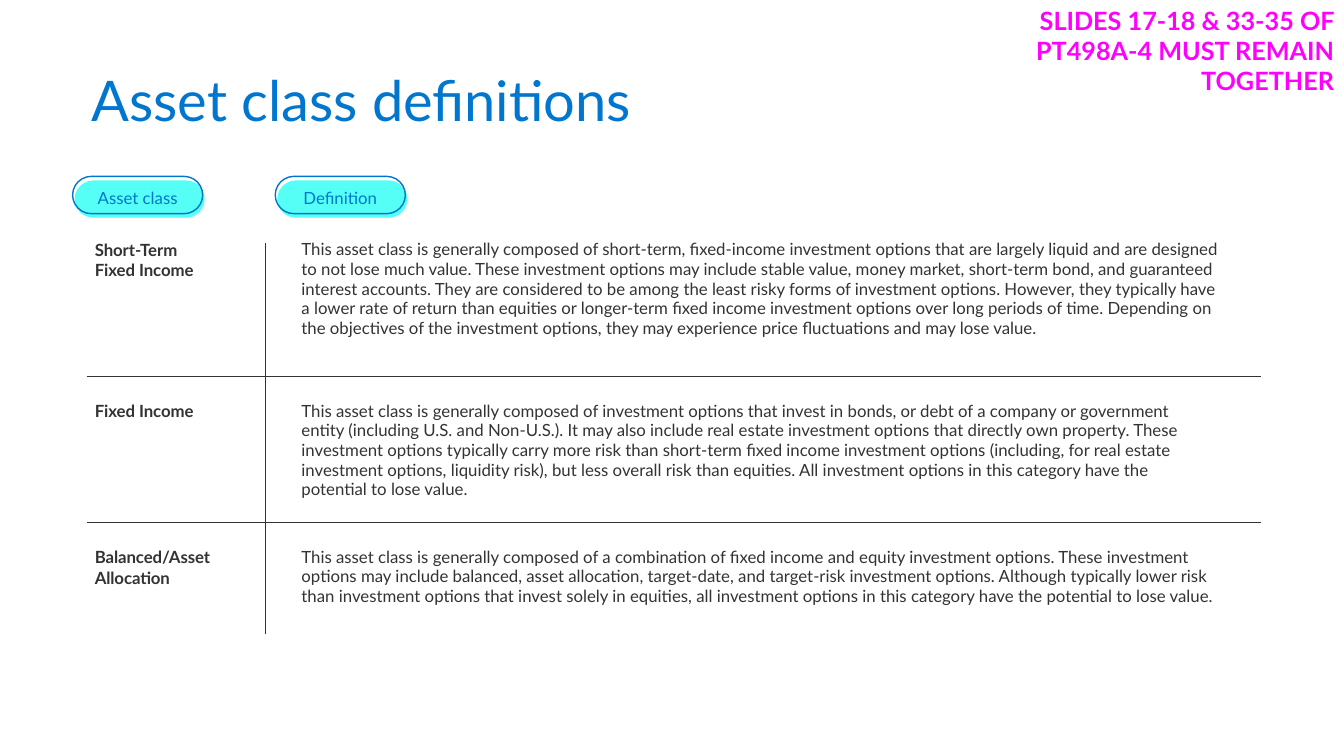
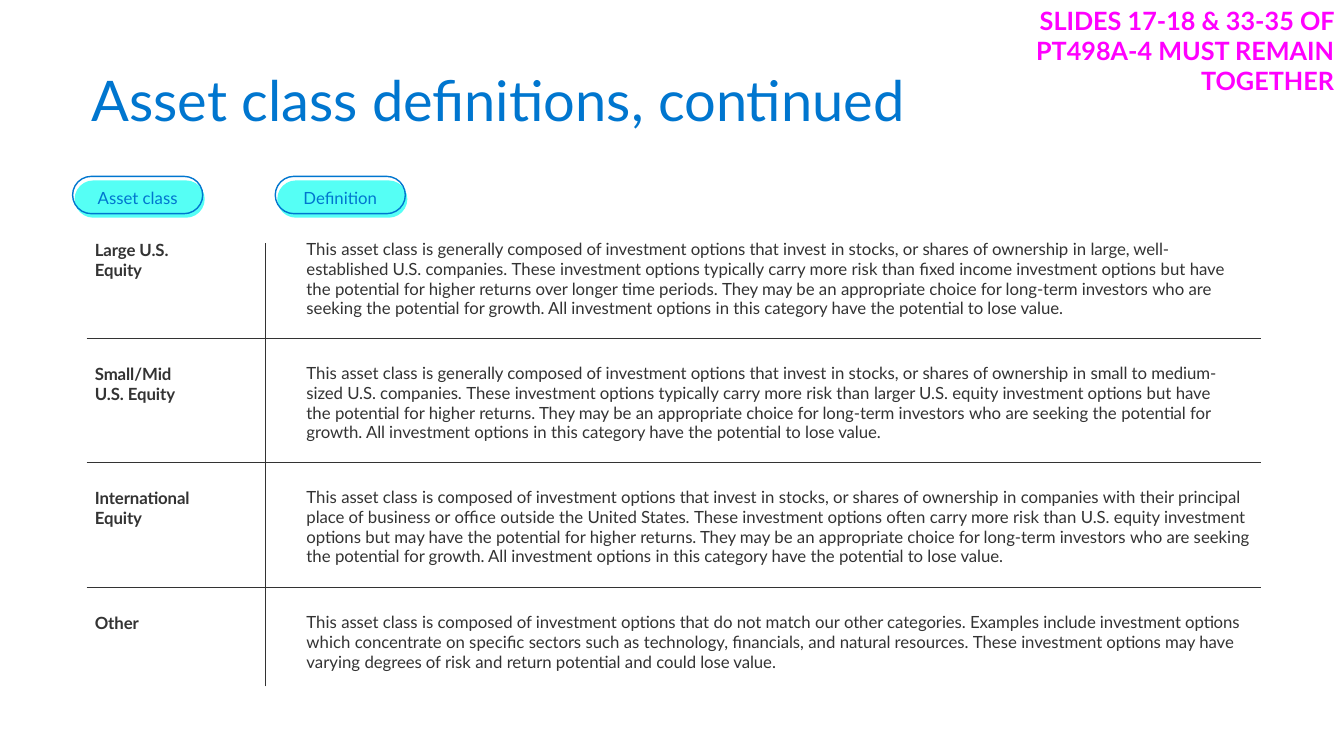
from itertools import accumulate

from lxml.etree import SubElement
from pptx import Presentation
from pptx.dml.color import RGBColor
from pptx.enum.shapes import MSO_CONNECTOR, MSO_SHAPE
from pptx.enum.text import PP_ALIGN
from pptx.oxml.ns import qn
from pptx.util import Emu, Pt

PX = 9144
FONT = "Lato"
COLORS = {
    "blue": "0076CF",
    "aqua": "55FFF5",
    "ink": "333333",
    "magenta": "FF00FF",
    "white": "FFFFFF",
}
TABLE_LEFT, TABLE_TOP = 84, 231
DIVIDER_RISE = 18
RULE_LEFT, RULE_RIGHT = 86, 1251
COLUMN_RULE_LEFT, COLUMN_RULE_TOP = 263, 241
NOTICE = "SLIDES 17-18 & 33-35 OF PT498A-4 MUST REMAIN TOGETHER"

DEFINITION_SLIDES = [
    {
        "title": "Asset class definitions",
        "columns": [209, 934],
        "row_heights": [160, 145, 145],
        "rule_bottom": 629,
        "rows": [
            (
                "Short-Term\vFixed Income",
                "This asset class is generally composed of short-term, fixed-income investment options that are "
                "largely liquid and are designed to not lose much value. These investment options may include "
                "stable value, money market, short-term bond, and guaranteed interest accounts. They are considered "
                "to be among the least risky forms of investment options. However, they typically have a lower rate "
                "of return than equities or longer-term fixed income investment options over long periods of time. "
                "Depending on the objectives of the investment options, they may experience price fluctuations and "
                "may lose value.",
                15,
            ),
            (
                "Fixed Income",
                "This asset class is generally composed of investment options that invest in bonds, or debt of a "
                "company or government entity (including U.S. and Non-U.S.). It may also include real estate "
                "investment options that directly own property. These investment options typically carry more risk "
                "than short-term fixed income investment options (including, for real estate investment options, "
                "liquidity risk), but less overall risk than equities. All investment options in this category have "
                "the potential to lose value.",
                42,
            ),
            (
                "Balanced/Asset Allocation",
                "This asset class is generally composed of a combination of fixed income and equity investment "
                "options. These investment options may include balanced, asset allocation, target-date, and "
                "target-risk investment options. Although typically lower risk than investment options that invest "
                "solely in equities, all investment options in this category have the potential to lose value.",
                15,
            ),
        ],
    },
    {
        "title": "Asset class definitions, continued",
        "columns": [214, 955],
        "row_heights": [123, 123, 124, 87],
        "rule_bottom": 681,
        "rows": [
            (
                "Large U.S.\vEquity",
                "This |asset |class is |generally composed of investment options that invest |in |stocks, |or "
                "|shares of ownership| in |large, well-established U.S. companies. |These |investment options "
                "typically |carry |more |risk than |fixed income investment options| but |have |the |potential for "
                "|higher |returns over longer |time periods. |They may |be an |appropriate choice for long-term "
                "investors |who |are| seeking the |potential for growth. All investment options| in this "
                "|category have |the |potential to lose value.",
                23,
            ),
            (
                "Small/Mid\vU.S. Equity",
                "This |asset |class is |generally composed of investment options that invest |in |stocks, |or "
                "|shares of ownership| in |small to medium-sized U.S. companies. |These |investment options "
                "typically |carry |more| risk than |larger U.S. |equity |investment options| but |have |the "
                "|potential for |higher |returns. They may |be an |appropriate choice for long-term investors |who "
                "|are| seeking the |potential for growth. All investment options| in this |category have |the "
                "|potential to lose value.",
                33,
            ),
            (
                "International\vEquity",
                "This |asset |class is |composed of investment options that invest |in |stocks, |or |shares of "
                "ownership| in |companies |with their |principal place of |business or |office |outside the| United "
                "States. |These |investment options often| carry |more| risk than |U.S. |equity |investment "
                "options| but |may have |the |potential for |higher |returns. They may |be an |appropriate choice "
                "for long-term investors |who |are| seeking the |potential for growth. All investment options| in "
                "this |category have |the |potential to lose value.",
                8,
            ),
            (
                "Other",
                "This |asset |class is |composed of investment options that |do |not match| our |other categories. "
                "Examples include investment options |which |concentrate |on specific| sectors| such as "
                "|technology, financials, |and |natural resources. |These |investment options may have |varying "
                "|degrees of |risk and |return potential| and |could lose value.",
                8,
            ),
        ],
    },
]


def px(value):
    return Emu(value * PX)


def color(name):
    return RGBColor.from_string(COLORS[name])


def add_run(paragraph, text, size, color_name, bold=False, tracking=0):
    run = paragraph.add_run()
    run.text = text
    run.font.name = FONT
    run.font.size = Pt(size)
    run.font.bold = bold
    run.font.color.rgb = color(color_name)
    if tracking:
        run.font._element.set("spc", str(tracking))


def add_text(slide, box, text, size, color_name, bold=False, align=PP_ALIGN.LEFT, spacing=1.0, left_margin=10):
    text_frame = slide.shapes.add_textbox(*map(px, box)).text_frame
    text_frame.word_wrap = True
    text_frame.margin_left = px(left_margin)
    paragraph = text_frame.paragraphs[0]
    paragraph.alignment = align
    paragraph.line_spacing = spacing
    add_run(paragraph, text, size, color_name, bold)


def add_line(slide, x1, y1, x2, y2):
    line = slide.shapes.add_connector(MSO_CONNECTOR.STRAIGHT, *map(px, (x1, y1, x2, y2)))
    line.line.color.rgb = color("ink")
    line.line.width = Pt(0.5)
    SubElement(line._element.spPr, qn("a:effectLst"))


def add_pill(slide, left, top, fill=None, outline=None):
    pill = slide.shapes.add_shape(MSO_SHAPE.ROUNDED_RECTANGLE, *map(px, (left, top, 129, 37)))
    pill.adjustments[0] = 0.5
    pill.shadow.inherit = False
    if fill:
        pill.fill.solid()
        pill.fill.fore_color.rgb = color(fill)
    else:
        pill.fill.background()
    if outline:
        pill.line.color.rgb = color(outline)
        pill.line.width = Pt(1)
    else:
        pill.line.fill.background()


def add_column_heading(slide, left, text):
    add_pill(slide, left + 2, 179, fill="aqua")
    add_text(slide, (left - 15, 179, 154, 31), text, 12, "blue", align=PP_ALIGN.CENTER, spacing=1.1, left_margin=15)
    add_pill(slide, left, 175, outline="blue")


def prepare_cell(cell, left_margin, right_margin):
    cell.fill.background()
    cell.margin_left = px(left_margin)
    cell.margin_right = px(right_margin)
    cell.margin_top = px(7)
    cell.margin_bottom = px(13)
    paragraph = cell.text_frame.paragraphs[0]
    paragraph.space_before = Pt(7.3)
    return paragraph


def add_label(cell, text):
    paragraph = prepare_cell(cell, 10, 30)
    for index, line in enumerate(text.split("\v")):
        if index:
            paragraph.add_line_break()
        add_run(paragraph, line, 12, "ink", bold=True, tracking=-5)


def add_definition(cell, text, right_margin):
    paragraph = prepare_cell(cell, 6, right_margin)
    paragraph.line_spacing = Pt(14)
    for index, part in enumerate(text.split("|")):
        add_run(paragraph, part, 12, "ink", tracking=-5 * (index % 2))


def add_definition_table(slide, content):
    columns, heights = content["columns"], content["row_heights"]
    frame = slide.shapes.add_table(
        len(heights), len(columns), px(TABLE_LEFT), px(TABLE_TOP), px(sum(columns)), px(sum(heights))
    )
    table = frame.table
    table.first_row = False
    table.horz_banding = False
    for column, width in zip(table.columns, columns):
        column.width = px(width)
    for row, height, (label, definition, right_margin) in zip(table.rows, heights, content["rows"]):
        row.height = px(height)
        add_label(row.cells[0], label)
        add_definition(row.cells[1], definition, right_margin)


def add_rules(slide, content):
    for offset in accumulate(content["row_heights"][:-1]):
        y = TABLE_TOP + offset - DIVIDER_RISE
        add_line(slide, RULE_LEFT, y, RULE_RIGHT, y)
    add_line(slide, COLUMN_RULE_LEFT, content["rule_bottom"], COLUMN_RULE_LEFT, COLUMN_RULE_TOP)


def add_definition_slide(presentation, content):
    slide = presentation.slides.add_slide(presentation.slide_layouts[6])
    slide.background.fill.solid()
    slide.background.fill.fore_color.rgb = color("white")
    add_text(slide, (81, 73, 1147, 73), content["title"], 40, "blue", spacing=0.8)
    add_definition_table(slide, content)
    add_rules(slide, content)
    for left, heading in ((72, "Asset class"), (273, "Definition")):
        add_column_heading(slide, left, heading)
    add_text(slide, (903, 0, 430, 71), NOTICE, 18, "magenta", bold=True, align=PP_ALIGN.RIGHT)


def main():
    presentation = Presentation()
    presentation.slide_width = px(1333)
    presentation.slide_height = px(750)
    for content in DEFINITION_SLIDES:
        add_definition_slide(presentation, content)
    presentation.save("out.pptx")


if __name__ == "__main__":
    main()
